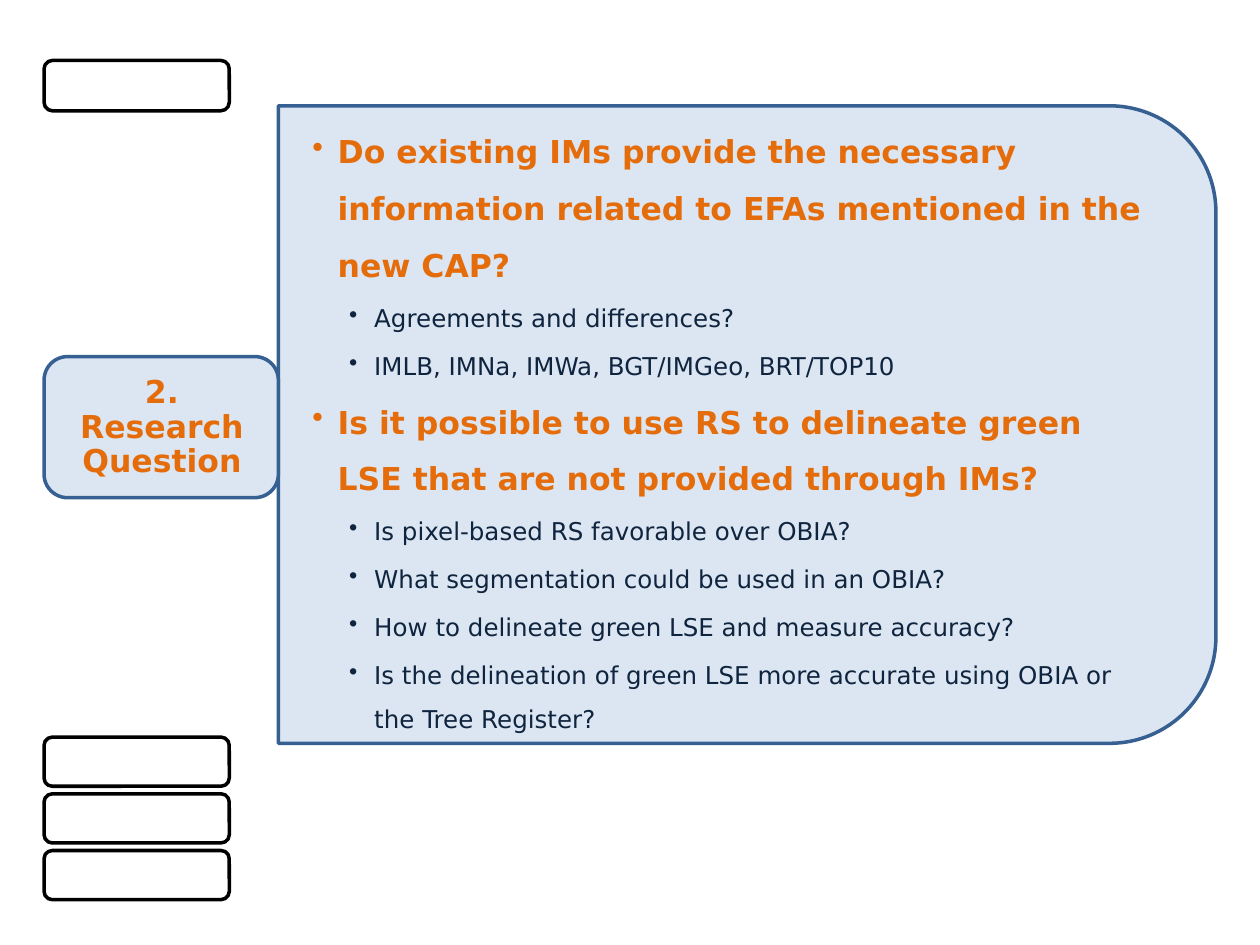
from lxml import etree
from pptx import Presentation
from pptx import util as u
from pptx.dml.color import RGBColor
from pptx.enum import shapes, text
from pptx.oxml.ns import qn

W, H = 10, 7.5
LEFT = 0.35
TAB_W = 1.86
PANEL_X = LEFT + TAB_W
PANEL_W, PANEL_H, PANEL_Y = 7.44, 5.06, 0.84
STEP_W, STEP_H, STEP_GAP = 1.47, 0.39, 0.45
ORANGE, NAVY, BLUE, PALE = "E46C0A", "0F243E", "376092", "DCE6F2"
FONT = "DejaVu Sans"

QUESTIONS = [
    ("Do existing IMs provide the necessary information related to EFAs mentioned in the new CAP?",
     ["Agreements and differences?",
      "IMLB, IMNa, IMWa, BGT/IMGeo, BRT/TOP10"]),
    ("Is it possible to use RS to delineate green LSE that are not provided through IMs?",
     ["Is pixel-based RS favorable over OBIA?",
      "What segmentation could be used in an OBIA?",
      "How to delineate green LSE and measure accuracy?",
      "Is the delineation of green LSE more accurate using OBIA or the Tree Register?"]),
]


def color(hex_text):
    return RGBColor.from_string(hex_text)


def inches(*values):
    return [u.Inches(v) for v in values]


def add_box(s, kind, box, fill, line):
    sp = s.shapes.add_shape(kind, *inches(*box))
    sp.shadow.inherit = False
    sp.fill.solid()
    sp.fill.fore_color.rgb = color(fill)
    sp.line.color.rgb = color(line)
    sp.line.width = u.Pt(2)
    return sp


def add_text_frame(s, box, inset_x, inset_y):
    tf = s.shapes.add_textbox(*inches(*box)).text_frame
    tf.word_wrap = True
    tf.vertical_anchor = text.MSO_ANCHOR.MIDDLE
    tf.margin_left = tf.margin_right = u.Inches(inset_x)
    tf.margin_top = tf.margin_bottom = u.Inches(inset_y)
    return tf


def style(p, size, hex_text, bold, spacing, after):
    """Format a paragraph; after is a share of the font size."""
    p.font.name = FONT
    p.font.size = u.Pt(size)
    p.font.bold = bold
    p.font.color.rgb = color(hex_text)
    p.line_spacing = spacing
    p.space_after = u.Pt(size * after)


def add_bullet(p, indent):
    pPr = p._p.get_or_add_pPr()
    pPr.set("marL", str(u.Inches(indent)))
    pPr.set("indent", str(u.Inches(-0.2)))
    bullet = etree.Element(qn("a:buChar"), char="•")
    pPr.find(qn("a:defRPr")).addprevious(bullet)


def add_step(s, y, h=STEP_H):
    add_box(s, shapes.MSO_SHAPE.ROUNDED_RECTANGLE, (LEFT, y, STEP_W, h), "FFFFFF", "000000")


def add_panel(s):
    # Turned a quarter, so width and height swap around the same centre
    x = PANEL_X + (PANEL_W - PANEL_H) / 2
    y = PANEL_Y + (PANEL_H - PANEL_W) / 2
    sp = add_box(s, shapes.MSO_SHAPE.ROUND_2_SAME_RECTANGLE,
                 (x, y, PANEL_H, PANEL_W), PALE, BLUE)
    sp.rotation = 90

    tf = add_text_frame(s, (PANEL_X, 1.08, 7.19, 4.56), 0.27, 0.14)
    p = tf.paragraphs[0]
    for i, (question, details) in enumerate(QUESTIONS):
        if i:
            p = tf.add_paragraph()
        p.text = question
        style(p, 18, ORANGE, True, 1.5, 0.15)
        add_bullet(p, 0.2)
        for detail in details:
            p = tf.add_paragraph()
            p.text = detail
            p.level = 1
            style(p, 14, NAVY, False, 1.5, 0.15)
            add_bullet(p, 0.49)


def add_tab(s):
    add_box(s, shapes.MSO_SHAPE.ROUNDED_RECTANGLE, (LEFT, 2.83, TAB_W, 1.12), PALE, BLUE)
    tf = add_text_frame(s, (0.41, 2.89, 1.75, 1.01), 0.07, 0.04)
    p = tf.paragraphs[0]
    p.text = "2. Research Question"
    p.alignment = text.PP_ALIGN.CENTER
    style(p, 18, ORANGE, True, 0.9, 0.35)


def main():
    prs = Presentation()
    prs.slide_width, prs.slide_height = inches(W, H)
    s = prs.slides.add_slide(prs.slide_layouts[6])
    add_step(s, 0.48, 0.4)
    add_panel(s)
    add_tab(s)
    for i in range(3):
        add_step(s, 5.85 + i * STEP_GAP)
    prs.save("out.pptx")


if __name__ == "__main__":
    main()
